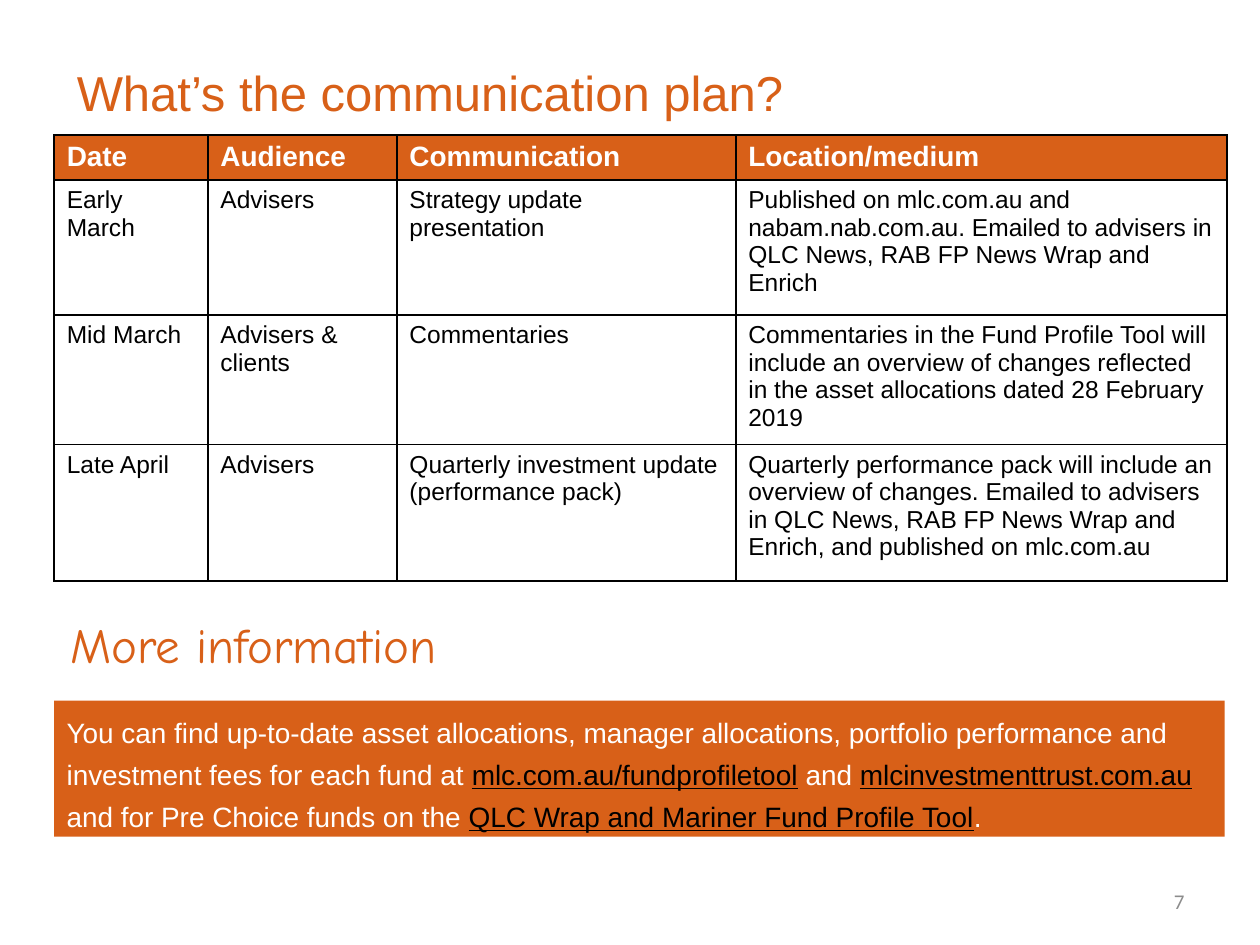
from dataclasses import dataclass

from lxml import etree
from pptx import Presentation
from pptx.dml.color import RGBColor
from pptx.enum.shapes import MSO_SHAPE
from pptx.enum.text import MSO_ANCHOR, PP_ALIGN
from pptx.oxml.ns import qn
from pptx.util import Inches, Pt


@dataclass(frozen=True)
class Theme:
    orange: RGBColor = RGBColor(0xD8, 0x60, 0x18)
    white: RGBColor = RGBColor(0xFF, 0xFF, 0xFF)
    black: RGBColor = RGBColor(0, 0, 0)
    grey: RGBColor = RGBColor(0x8C, 0x8C, 0x8C)
    body_font: str = "Arial"
    accent_font: str = "Comic Neue"
    number_font: str = "Calibri"
    heading_size: int = 28
    large_size: int = 16
    cell_size: int = 14
    number_size: int = 12
    border_width: int = 1


THEME = Theme()

COLUMN_WIDTHS = (1.22, 1.5, 2.69, 3.9)
ROW_HEIGHTS = (0.36, 1.07, 1.03, 1.08)
PLAN = (
    ("Date", "Audience", "Communication", "Location/medium"),
    ("Early March", "Advisers", "Strategy update presentation",
     "Published on mlc.com.au and nabam.nab.com.au. Emailed to advisers in "
     "QLC News, RAB FP News Wrap and Enrich"),
    ("Mid March", "Advisers & clients", "Commentaries",
     "Commentaries in the Fund Profile Tool will include an overview of changes "
     "reflected in the asset allocations dated 28 February 2019"),
    ("Late April", "Advisers", "Quarterly investment update (performance pack)",
     "Quarterly performance pack will include an overview of changes. Emailed to "
     "advisers in QLC News, RAB FP News Wrap and Enrich, and published on mlc.com.au"),
)

# Each span is (text, is a reference)
INFORMATION = (
    ("You can find up-to-date asset allocations, manager allocations, portfolio "
     "performance and investment fees for each fund at ", False),
    ("mlc.com.au/fundprofiletool", True),
    (" and ", False),
    ("mlcinvestmenttrust.com.au", True),
    (" and for Pre Choice funds on the ", False),
    ("QLC Wrap and Mariner Fund Profile Tool", True),
    (".", False),
)


def style_font(font, name, size, color, bold=False):
    font.name = name
    font.size = Pt(size)
    font.color.rgb = color
    font.bold = bold


def add_heading(page, box, text, font_name):
    frame = page.shapes.add_textbox(*map(Inches, box)).text_frame
    frame.word_wrap = True
    frame.margin_left = frame.margin_right = 0
    frame.margin_top = frame.margin_bottom = 0
    para = frame.paragraphs[0]
    para.text = text
    para.line_spacing = 0.9
    style_font(para.font, font_name, THEME.heading_size, THEME.orange)


def add_borders(cell):
    properties = cell._tc.get_or_add_tcPr()
    for index, side in enumerate(("a:lnL", "a:lnR", "a:lnT", "a:lnB")):
        line = etree.Element(qn(side), w=str(Pt(THEME.border_width)))
        fill = etree.SubElement(line, qn("a:solidFill"))
        etree.SubElement(fill, qn("a:srgbClr"), val=str(THEME.black))
        properties.insert(index, line)


def add_plan_table(page, box):
    table = page.shapes.add_table(
        len(PLAN), len(COLUMN_WIDTHS), *map(Inches, box)).table
    for column, width in zip(table.columns, COLUMN_WIDTHS):
        column.width = Inches(width)
    for row, height in zip(table.rows, ROW_HEIGHTS):
        row.height = Inches(height)
    for row_index, texts in enumerate(PLAN):
        header = row_index == 0
        for column_index, text in enumerate(texts):
            cell = table.cell(row_index, column_index)
            if header:
                cell.fill.solid()
                cell.fill.fore_color.rgb = THEME.orange
            else:
                cell.fill.background()
            add_borders(cell)
            para = cell.text_frame.paragraphs[0]
            para.text = text
            style_font(para.font, THEME.body_font,
                       THEME.large_size if header else THEME.cell_size,
                       THEME.white if header else THEME.black, header)


def add_information_panel(page, box):
    panel = page.shapes.add_shape(MSO_SHAPE.RECTANGLE, *map(Inches, box))
    panel.shadow.inherit = False
    panel.fill.solid()
    panel.fill.fore_color.rgb = THEME.orange
    panel.line.fill.background()
    frame = panel.text_frame
    frame.word_wrap = True
    frame.vertical_anchor = MSO_ANCHOR.TOP
    para = frame.paragraphs[0]
    para.alignment = PP_ALIGN.LEFT
    para.line_spacing = Pt(24)
    for text, is_reference in INFORMATION:
        span = para.add_run()
        span.text = text
        style_font(span.font, THEME.body_font, THEME.large_size,
                   THEME.black if is_reference else THEME.white)
        span.font.underline = is_reference


def add_page_number(page, box, number):
    frame = page.shapes.add_textbox(*map(Inches, box)).text_frame
    frame.word_wrap = True
    frame.vertical_anchor = MSO_ANCHOR.MIDDLE
    para = frame.paragraphs[0]
    para.text = str(number)
    para.alignment = PP_ALIGN.RIGHT
    style_font(para.font, THEME.number_font, THEME.number_size, THEME.grey)


def main():
    deck = Presentation()
    deck.slide_width = Inches(10)
    deck.slide_height = Inches(7.5)
    page = deck.slides.add_slide(deck.slide_layouts[6])

    # Communication plan
    add_plan_table(page, (0.43, 1.07, sum(COLUMN_WIDTHS), sum(ROW_HEIGHTS)))
    add_heading(page, (0.61, 0.55, 7.2, 0.42),
                "What’s the communication plan?", THEME.body_font)

    # Further information
    add_information_panel(page, (0.43, 5.56, 9.29, 1.08))
    add_heading(page, (0.56, 4.93, 7.2, 0.44),
                "More information", THEME.accent_font)

    # Footer
    add_page_number(page, (7.17, 6.95, 2.33, 0.4), 7)
    deck.save("out.pptx")


if __name__ == "__main__":
    main()
